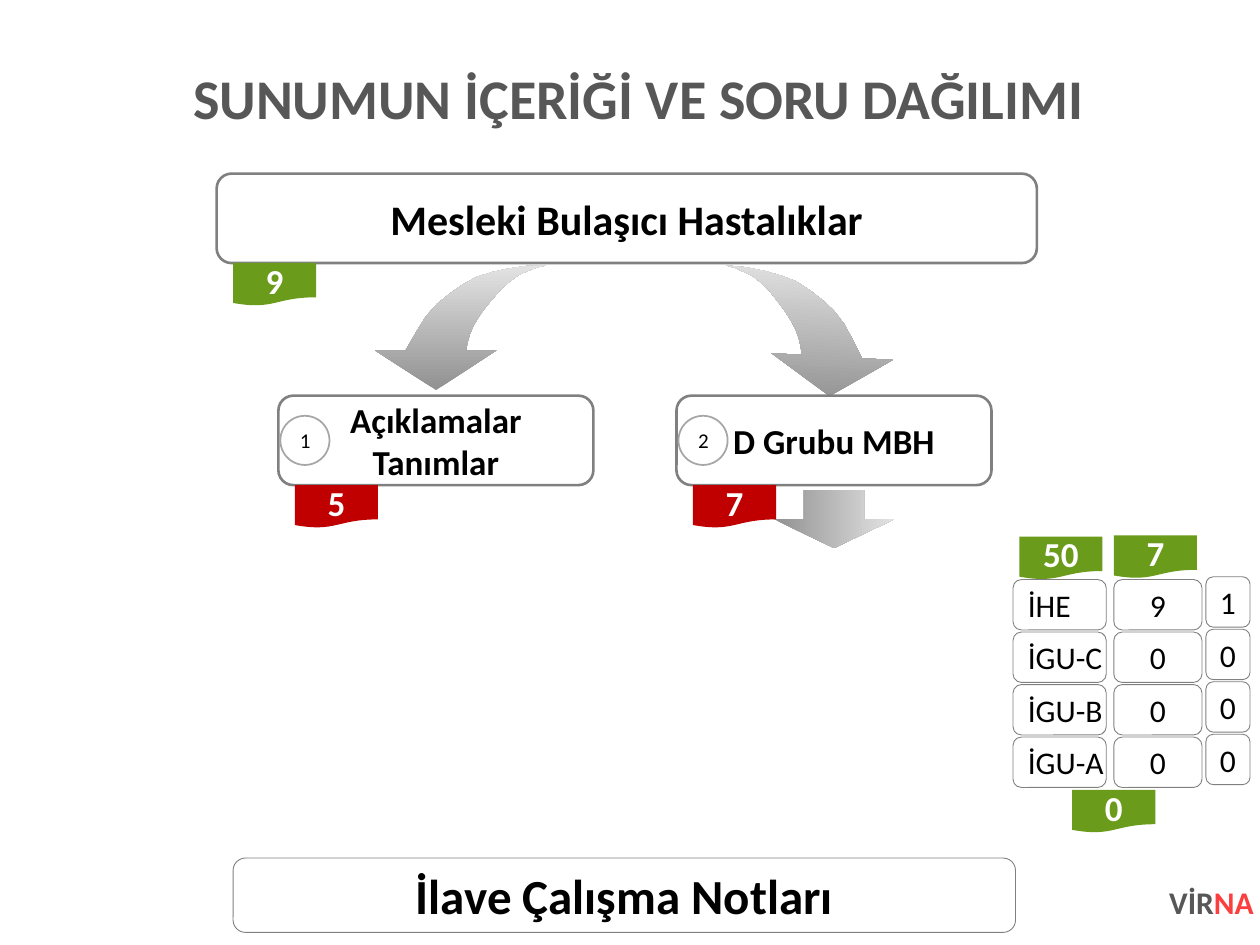
from pptx import Presentation
from pptx.dml.color import RGBColor
from pptx.enum.shapes import MSO_SHAPE
from pptx.enum.text import MSO_ANCHOR, PP_ALIGN
from pptx.util import Pt

COLORS = {
    "black": "000000", "white": "FFFFFF", "gray_text": "575757",
    "accent": "FB3E3E", "border": "808080", "ring": "A6A6A6",
    "green": "6B9B1A", "red": "C00000", "dark": "919191", "light": "E3E3E3",
}
FONT = "Calibri"
FLAG_WIDTH, FLAG_HEIGHT = 47.5, 24.5
BADGE_SIZE = 28.1
ARROW_WIDTH = 98
CURVED_ARROW = [
    (98, 0), (86.8, 0.4), (76.7, 1.8), (66.6, 4), (58, 6.8), (50, 11.2),
    (42.8, 16.2), (35.6, 22), (29.2, 29.2), (23.4, 38.5), (17.6, 48.6),
    (0, 48.6), (35, 71.3), (69.5, 48.6), (52.2, 48.6), (52.9, 44.3),
    (54.4, 39.2), (56.5, 34.2), (60.1, 28.4), (63.7, 23.4), (68, 18.4),
    (72.4, 13.3), (77.4, 9), (82.4, 5.4), (87.5, 3.2), (93.2, 1.1),
]


def color(name):
    return RGBColor.from_string(COLORS[name])


def format_text(frame, size, name, bold=True, align=PP_ALIGN.CENTER):
    frame.vertical_anchor = MSO_ANCHOR.MIDDLE
    for para in frame.paragraphs:
        para.alignment = align
        for span in para.runs:
            span.font.name = FONT
            span.font.size = Pt(size)
            span.font.bold = bold
            span.font.color.rgb = color(name)


def add_preset(page, preset, box):
    shape = page.shapes.add_shape(preset, *map(Pt, box))
    shape.shadow.inherit = False
    return shape


def add_card(page, box, text, size, line_width=0.5, bold=True,
             align=PP_ALIGN.CENTER):
    card = add_preset(page, MSO_SHAPE.ROUNDED_RECTANGLE, box)
    card.fill.background()
    card.line.color.rgb = color("border")
    card.line.width = Pt(line_width)
    card.text_frame.text = text
    card.text_frame.word_wrap = False
    format_text(card.text_frame, size, "black", bold, align)


def add_flag(page, left, top, text, fill):
    flag = add_preset(page, MSO_SHAPE.FLOWCHART_DOCUMENT,
                      (left, top, FLAG_WIDTH, FLAG_HEIGHT))
    flag.fill.solid()
    flag.fill.fore_color.rgb = color(fill)
    flag.line.fill.background()
    flag.text_frame.text = text
    format_text(flag.text_frame, 20, "white")


def add_badge(page, left, top, text):
    badge = add_preset(page, MSO_SHAPE.OVAL, (left, top, BADGE_SIZE, BADGE_SIZE))
    badge.fill.background()
    badge.line.color.rgb = color("ring")
    badge.line.width = Pt(1)
    badge.text_frame.text = text
    format_text(badge.text_frame, 12, "black", bold=False)


def add_topic(page, box, text, size, count, flag_color, number=None):
    """Card with a question-count flag hanging below and an optional badge."""
    left, top, _, height = box
    add_card(page, box, text, size, line_width=1.5)
    add_flag(page, left + 9.4, top + height, count, flag_color)
    if number:
        add_badge(page, left + 1.1, top + 11.5, number)


def paint_arrow(arrow, angle):
    arrow.shadow.inherit = False
    arrow.line.fill.background()
    arrow.fill.gradient()
    arrow.fill.gradient_angle = angle
    for stop, name in zip(arrow.fill.gradient_stops, ("dark", "light")):
        stop.color.rgb = color(name)


def add_curved_arrow(page, left, top, mirrored=False, rotation=0):
    outline = [(Pt(ARROW_WIDTH - x if mirrored else x), Pt(y))
               for x, y in CURVED_ARROW]
    builder = page.shapes.build_freeform(*outline[0])
    builder.add_line_segments(outline[1:], close=True)
    arrow = builder.convert_to_shape(Pt(left), Pt(top))
    arrow.rotation = rotation
    paint_arrow(arrow, 90)


def clear_margins(frame):
    frame.margin_left = frame.margin_right = 0
    frame.margin_top = frame.margin_bottom = 0


def add_title(page, box, text):
    title = page.shapes.title
    title.left, title.top, title.width, title.height = map(Pt, box)
    title.text_frame.text = text
    title.text_frame.word_wrap = True
    clear_margins(title.text_frame)
    title.text_frame.paragraphs[0].line_spacing = 0.9
    format_text(title.text_frame, 32, "gray_text")


def add_score_grid(page, left, top):
    """Rows of exam type, past count and latest count, with total flags."""
    rows = [("İHE", "9", "1"), ("İGU-C", "0", "0"),
            ("İGU-B", "0", "0"), ("İGU-A", "0", "0")]
    columns = [(0, 0, 53.3, PP_ALIGN.LEFT), (57.6, 0, 50.4, PP_ALIGN.CENTER),
               (110.2, -1.6, 25.2, PP_ALIGN.CENTER)]
    for index, row in enumerate(rows):
        for text, (shift, rise, width, align) in zip(row, columns):
            box = (left + shift, top + rise + index * 30, width, 28.8)
            add_card(page, box, text, 18, bold=False, align=align)
    for shift, drop, total in [(3.6, -24.5, "50"), (57.6, -25.2, "7"),
                               (33.8, 120.2, "0")]:
        add_flag(page, left + shift, top + drop, total, "green")


def add_signature(page, box):
    frame = page.shapes.add_textbox(*map(Pt, box)).text_frame
    frame.word_wrap = True
    clear_margins(frame)
    para = frame.paragraphs[0]
    para.add_run().text = "VİR"
    para.add_run().text = "NA"
    format_text(frame, 18, "gray_text", align=PP_ALIGN.RIGHT)
    frame.vertical_anchor = MSO_ANCHOR.TOP
    para.runs[1].font.color.rgb = color("accent")


def main():
    deck = Presentation()
    deck.slide_width, deck.slide_height = Pt(720), Pt(540)
    page = deck.slides.add_slide(deck.slide_layouts[5])
    add_title(page, (18, 32.4, 694, 51.1), "SUNUMUN İÇERİĞİ VE SORU DAĞILIMI")
    add_curved_arrow(page, 413, 154.4, mirrored=True, rotation=3.2)
    add_curved_arrow(page, 214.2, 151.6)
    down_arrow = add_preset(page, MSO_SHAPE.DOWN_ARROW, (442.1, 280.1, 69.1, 33.1))
    paint_arrow(down_arrow, 0)
    add_topic(page, (123.8, 99.2, 468.7, 51.1), "Mesleki Bulaşıcı Hastalıklar",
              24, "9", "green")
    add_topic(page, (159.1, 226.1, 180, 51.1), "Açıklamalar\nTanımlar",
              20, "5", "red", "1")
    add_topic(page, (386.6, 226.1, 180, 51.1), "D Grubu MBH",
              20, "7", "red", "2")
    add_card(page, (133.2, 490.3, 447.1, 42.5), "İlave Çalışma Notları", 28)
    add_score_grid(page, 578.9, 331.2)
    add_signature(page, (664.6, 504.7, 51.8, 35))
    deck.save("out.pptx")


if __name__ == "__main__":
    main()
